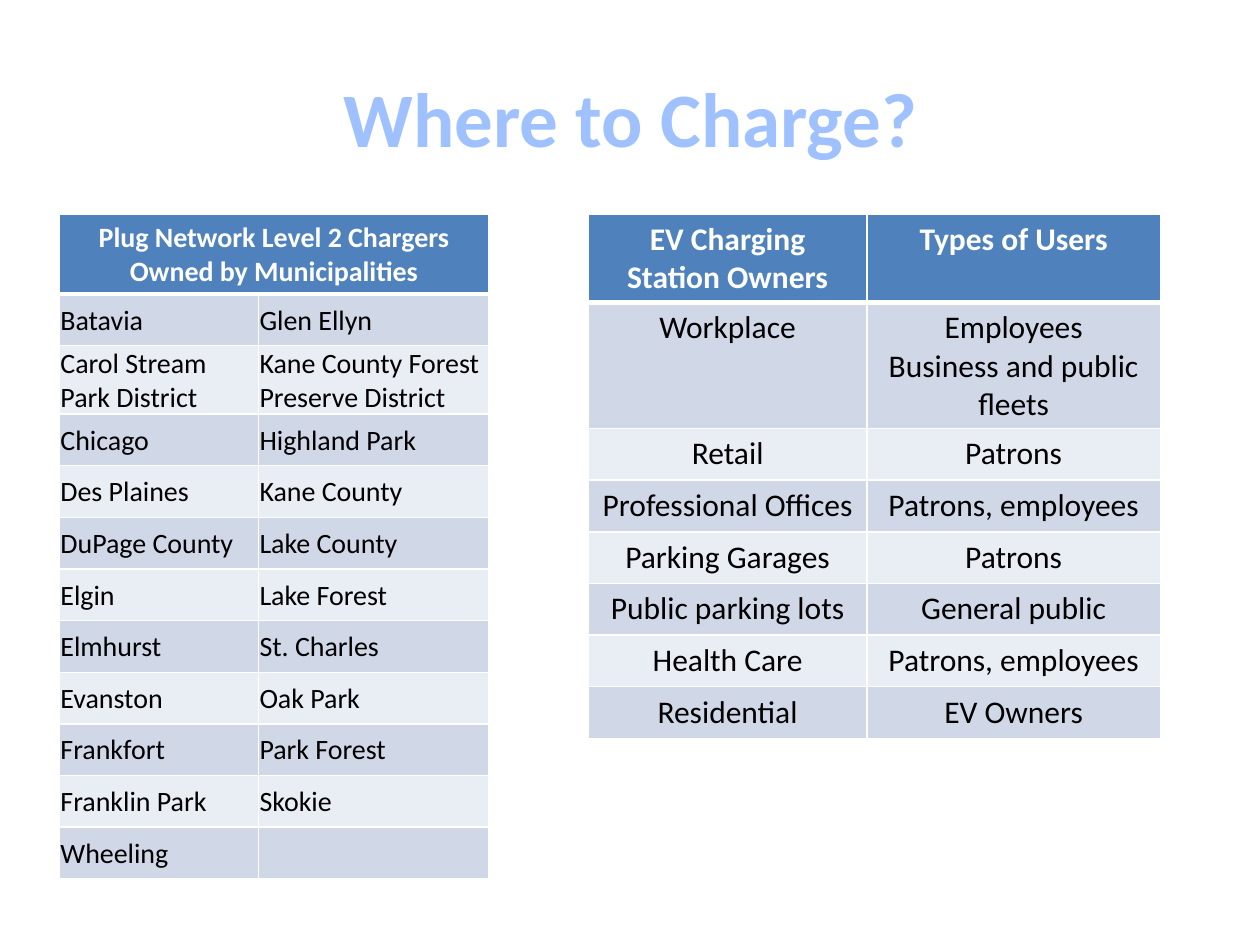
from lxml.etree import SubElement
from pptx import Presentation
from pptx.dml.color import RGBColor
from pptx.enum.text import MSO_ANCHOR as Anchor, PP_ALIGN as Align
from pptx.oxml.ns import qn
from pptx.util import Inches, Pt

TITLE = "Where to Charge?"
MUNICIPALITIES = [
    ("Plug Network Level 2 Chargers Owned by Municipalities", ""),
    ("Batavia", "Glen Ellyn"),
    ("Carol Stream Park District", "Kane County Forest Preserve District"),
    ("Chicago", "Highland Park"),
    ("Des Plaines", "Kane County"),
    ("DuPage County", "Lake County"),
    ("Elgin", "Lake Forest"),
    ("Elmhurst", "St. Charles"),
    ("Evanston", "Oak Park"),
    ("Frankfort", "Park Forest"),
    ("Franklin Park", "Skokie"),
    ("Wheeling", ""),
]
STATION_OWNERS = [
    ("EV Charging Station Owners", "Types of Users"),
    ("Workplace", "Employees\nBusiness and public fleets"),
    ("Retail", "Patrons"),
    ("Professional Offices", "Patrons, employees"),
    ("Parking Garages", "Patrons"),
    ("Public parking lots", "General public"),
    ("Health Care", "Patrons, employees"),
    ("Residential", "EV Owners"),
]
FONT = "Calibri"
HEADER, BANDS = "4F81BD", ("E9EDF4", "D0D8E8")
TABLE_TOP, ROW_HEIGHT = 1.7, 0.41


def color(value):
    return RGBColor.from_string(value)


def style(paragraph, size, ink, bold, align):
    paragraph.alignment = align
    font = paragraph.font
    font.name, font.size, font.bold = FONT, Pt(size), bold
    font.color.rgb = color(ink)


def add_borders(cell, above, below):
    properties = cell._tc.get_or_add_tcPr()
    for side, width in (("L", 1), ("R", 1), ("T", above), ("B", below)):
        line = SubElement(properties, qn(f"a:ln{side}"), w=str(Pt(width)))
        SubElement(SubElement(line, qn("a:solidFill")), qn("a:srgbClr"), val="FFFFFF")


def add_listing(slide, rows, left, widths, size, compact):
    table = slide.shapes.add_table(
        len(rows), len(widths), Inches(left), Inches(TABLE_TOP),
        Inches(sum(widths)), Inches(ROW_HEIGHT * len(rows))).table
    table.horz_banding = False
    for column, width in zip(table.columns, widths):
        column.width = Inches(width)
    for r, entries in enumerate(rows):
        table.rows[r].height = Inches(ROW_HEIGHT)
        header = r == 0
        for c, entry in enumerate(entries):
            cell = table.cell(r, c)
            cell.text = entry
            add_borders(cell, 3 if r == 1 else 1, 3 if header else 1)
            cell.fill.solid()
            cell.fill.fore_color.rgb = color(HEADER if header else BANDS[r % 2])
            tight = compact and not header
            if tight:
                cell.vertical_anchor = Anchor.MIDDLE
                cell.margin_left = cell.margin_right = cell.margin_top = Inches(0.01)
                cell.margin_bottom = 0
            for paragraph in cell.text_frame.paragraphs:
                style(paragraph, size, "FFFFFF" if header else "000000", header,
                      Align.LEFT if tight else Align.CENTER)
    return table


deck = Presentation()
deck.slide_width, deck.slide_height = Inches(10), Inches(7.5)
slide = deck.slides.add_slide(deck.slide_layouts[6])

heading = slide.shapes.add_textbox(
    Inches(0.17), Inches(0.3), Inches(9.67), Inches(1.25)).text_frame
heading.word_wrap = True
heading.vertical_anchor = Anchor.MIDDLE
heading.text = TITLE
style(heading.paragraphs[0], 44, "A0C1FF", True, Align.CENTER)

add_listing(slide, STATION_OWNERS, 4.67, (2.21, 2.33), 18, False)
municipalities = add_listing(slide, MUNICIPALITIES, 0.47, (1.58, 1.83), 16, True)
municipalities.cell(0, 0).merge(municipalities.cell(0, 1))

deck.save("out.pptx")
